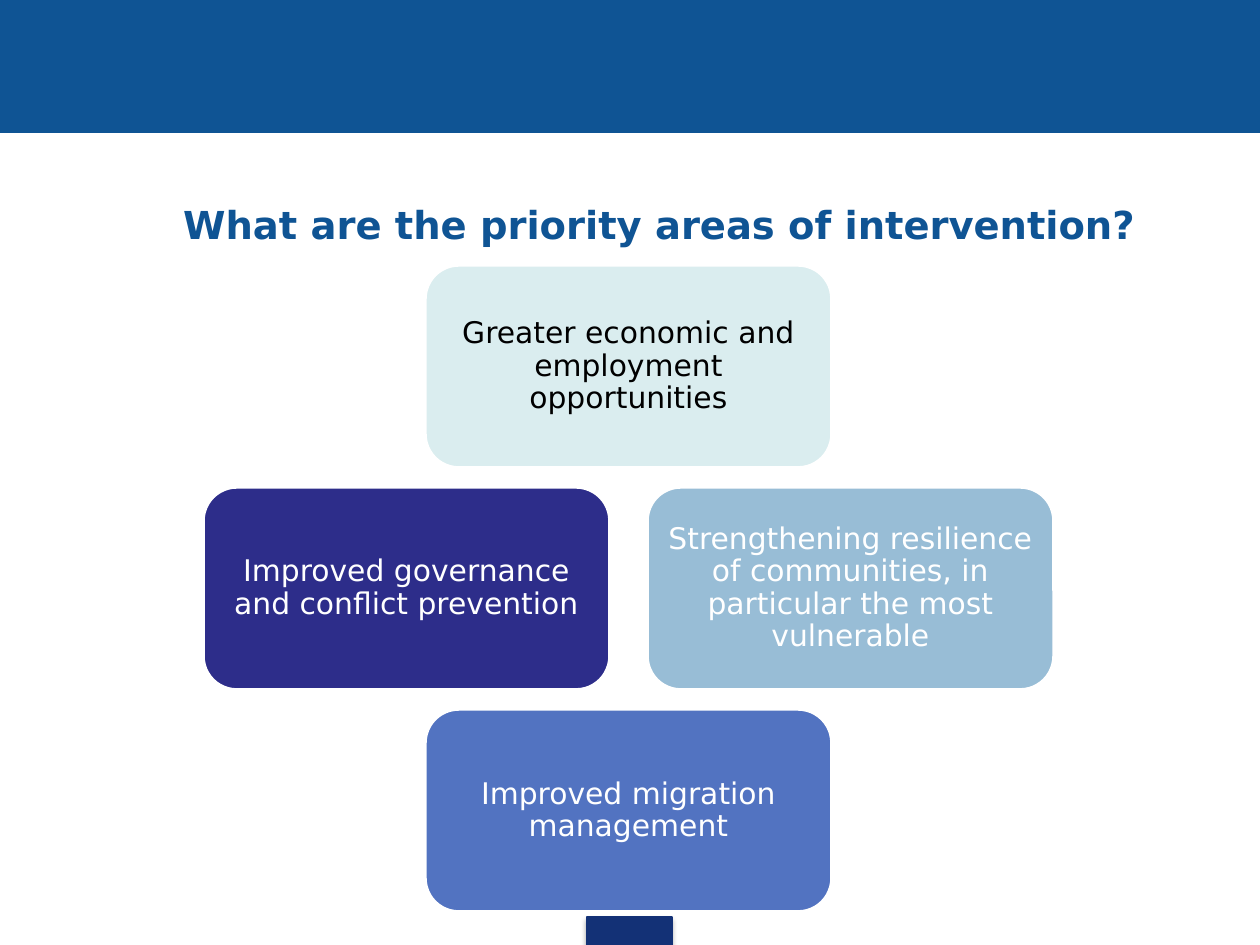
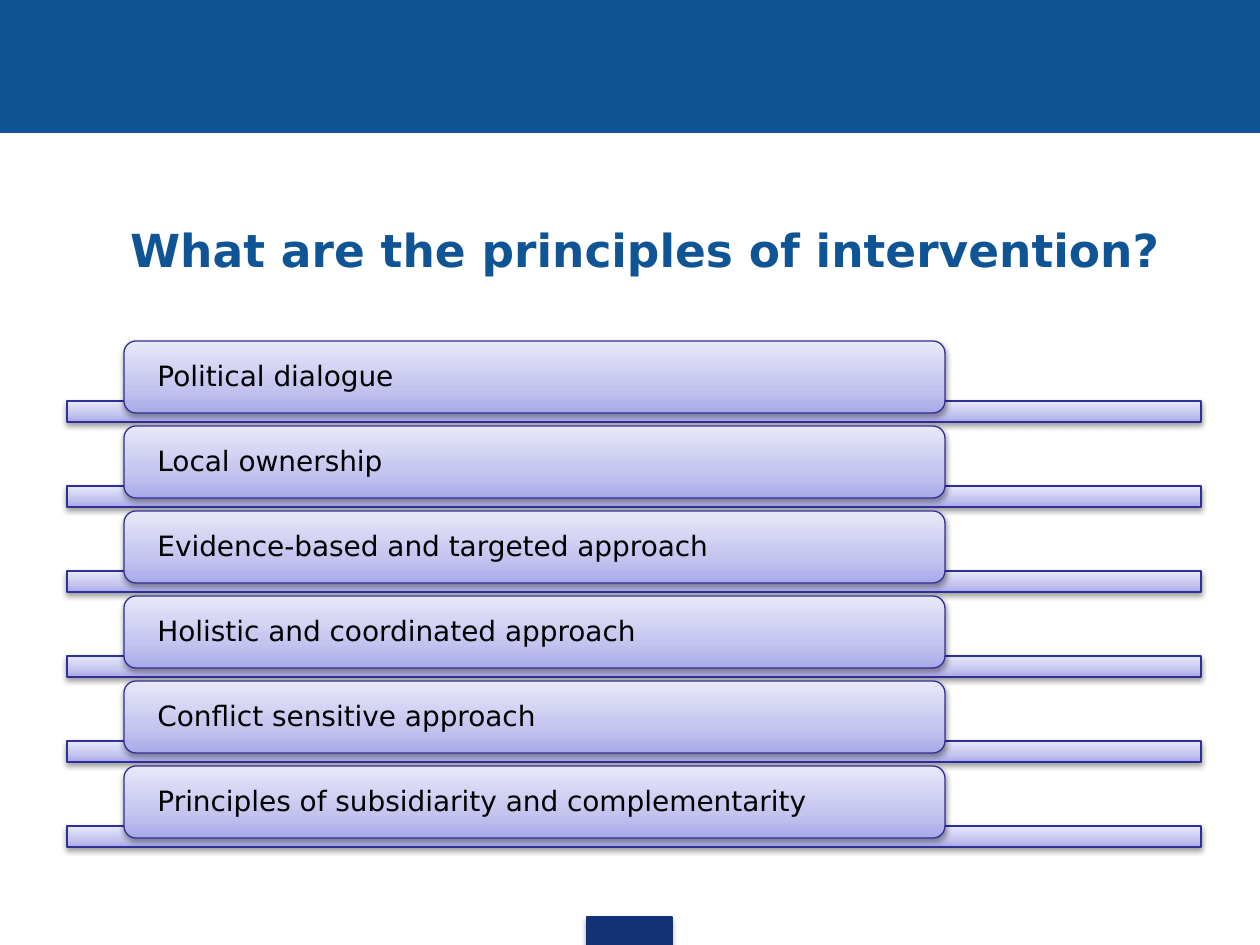
import copy

import pptx
import pptx.dml.color
import pptx.enum.shapes
import pptx.enum.text
import pptx.oxml.ns
import pptx.util
from lxml import etree

FONT = "DejaVu Sans"
COLORS = {
    "band": "0F5494", "tab": "133176", "white": "FFFFFF", "black": "000000",
    "mint": "DAEDEF", "sky": "98BDD6", "blue": "5273C1", "indigo": "2D2D8A",
    "outline": "2F2F98", "deep": "A9A9E9", "mid": "C4C4EF", "pale": "E8E8FA",
}
ROW_STOPS = [(0, "deep"), (0.35, "mid"), (1, "pale")]

AREAS_TITLE = "What are the priority areas of intervention?"
AREAS = [
    ("Greater economic and employment opportunities", 1, 0, "mint", "black"),
    ("Strengthening resilience of communities, in particular the most vulnerable",
     2, 1, "sky", "white"),
    ("Improved migration management", 1, 2, "blue", "white"),
    ("Improved governance and conflict prevention", 0, 1, "indigo", "white"),
]
PRINCIPLES_TITLE = "What are the principles of intervention?"
PRINCIPLES = [
    "Political dialogue",
    "Local ownership",
    "Evidence-based and targeted approach",
    "Holistic and coordinated approach",
    "Conflict sensitive approach",
    "Principles of subsidiarity and complementarity",
]

RECT = pptx.enum.shapes.MSO_SHAPE.RECTANGLE
ROUND = pptx.enum.shapes.MSO_SHAPE.ROUNDED_RECTANGLE
LEFT = pptx.enum.text.PP_ALIGN.LEFT
CENTER = pptx.enum.text.PP_ALIGN.CENTER
qn = pptx.oxml.ns.qn


def px(n):
    return pptx.util.Emu(round(n * 914400 / 126))


def rgb(name):
    return pptx.dml.color.RGBColor.from_string(COLORS[name])


def add_box(slide, kind, x, y, w, h, fill, line, width=0.75):
    sp = slide.shapes.add_shape(kind, px(x), px(y), px(w), px(h))
    sp.shadow.inherit = False
    if isinstance(fill, list):
        fill_gradient(sp, fill)
    else:
        sp.fill.solid()
        sp.fill.fore_color.rgb = rgb(fill)
    sp.line.color.rgb = rgb(line)
    sp.line.width = pptx.util.Pt(width)
    return sp


def fill_gradient(sp, stops):
    sp.fill.gradient()
    sp.fill.gradient_angle = 90
    gs_lst = sp._element.spPr.find(".//" + qn("a:gsLst"))
    gs_lst.append(copy.deepcopy(gs_lst[0]))
    for stop, (position, color) in zip(sp.fill.gradient_stops, stops):
        stop.position = position
        stop.color.rgb = rgb(color)


def add_shadow(sp, opacity, blur, distance):
    effects = sp._element.spPr.find(qn("a:effectLst"))
    shadow = etree.SubElement(
        effects, qn("a:outerShdw"), blurRad=str(pptx.util.Pt(blur)),
        dist=str(pptx.util.Pt(distance)), dir="5400000", rotWithShape="0")
    color = etree.SubElement(shadow, qn("a:srgbClr"), val=COLORS["black"])
    etree.SubElement(color, qn("a:alpha"), val=str(opacity * 1000))


def set_text(sp, text, size, color, align, bold=False, spacing=None, margins=None):
    tf = sp.text_frame
    tf.word_wrap = True
    tf.vertical_anchor = pptx.enum.text.MSO_ANCHOR.MIDDLE
    if margins:
        tf.margin_left = tf.margin_right = px(margins[0])
        tf.margin_top = tf.margin_bottom = px(margins[1])
    p = tf.paragraphs[0]
    p.text = text
    p.alignment = align
    p.line_spacing = spacing
    p.font.name = FONT
    p.font.size = pptx.util.Pt(size)
    p.font.bold = bold
    p.font.color.rgb = rgb(color)
    return p


def add_slide(prs, title, title_box, size):
    slide = prs.slides.add_slide(prs.slide_layouts[6])
    add_box(slide, RECT, 0, 0, 1260, 132, "band", "band")
    tab = add_box(slide, RECT, 587, 917, 85, 28, "tab", "tab")
    add_shadow(tab, 35, 3.1, 1.8)
    sp = slide.shapes.add_textbox(*map(px, title_box))
    p = set_text(sp, title, size, "band", CENTER, bold=True)
    p._p.get_or_add_pPr().set("marL", str(px(49)))
    return slide


def add_areas(prs):
    slide = add_slide(prs, AREAS_TITLE, (84, 155, 1101, 139), 22)
    step = 222
    for text, col, row, fill, color in AREAS:
        sp = add_box(slide, ROUND, 203 + col * step, 265 + row * step,
                     407, 203, fill, "white", 2)
        set_text(sp, text, 17, color, CENTER, spacing=0.9, margins=(9, 9))


def add_principles(prs):
    slide = add_slide(prs, PRINCIPLES_TITLE, (54, 185, 1134, 129), 26)
    for i, text in enumerate(PRINCIPLES):
        top = 341 + i * 85
        bar = add_box(slide, RECT, 67, top + 60, 1134, 21, ROW_STOPS, "outline")
        label = add_box(slide, ROUND, 124, top, 821, 72, ROW_STOPS, "outline")
        for sp in (bar, label):
            add_shadow(sp, 38, 3.1, 1.6)
        set_text(label, text, 16, "black", LEFT, spacing=0.9, margins=(30, 2))


def main():
    prs = pptx.Presentation()
    prs.slide_width = px(1260)
    prs.slide_height = px(945)
    add_areas(prs)
    add_principles(prs)
    prs.save("out.pptx")


if __name__ == "__main__":
    main()
